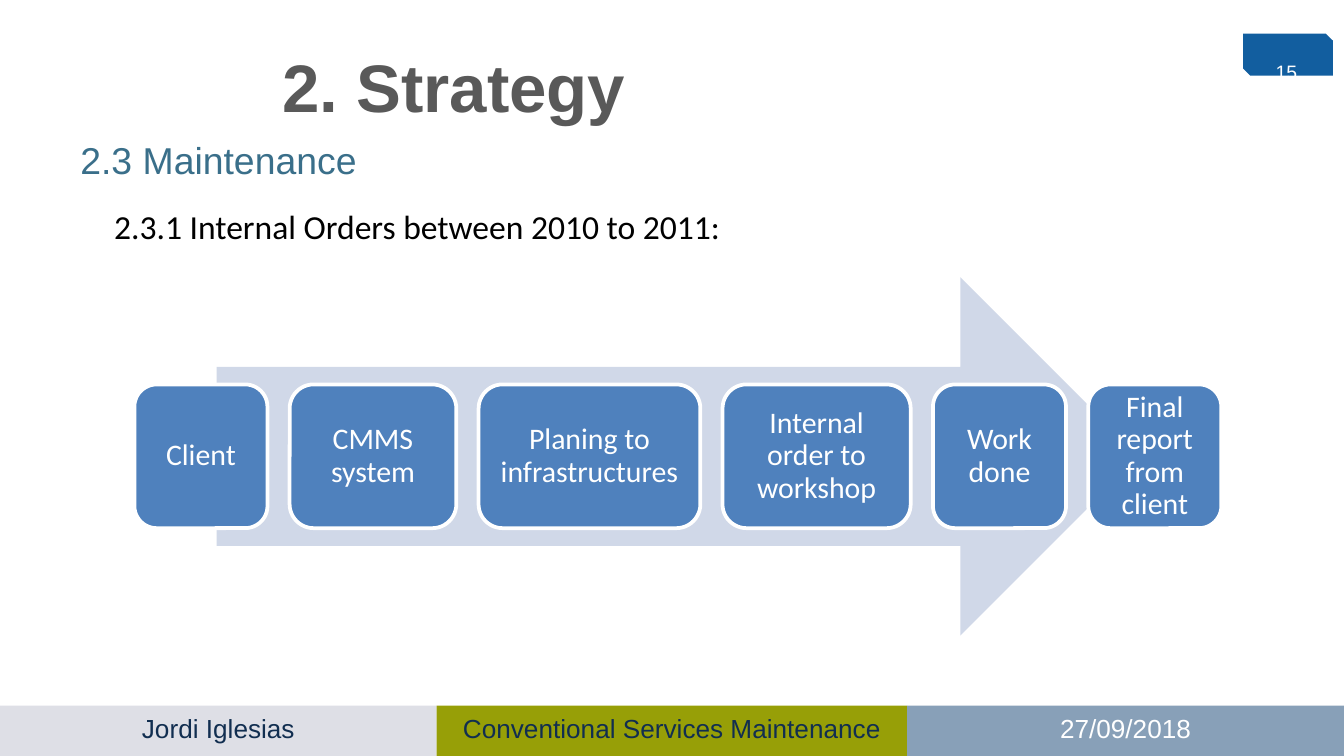
from pptx import Presentation
from pptx.dml.color import RGBColor
from pptx.enum.shapes import MSO_SHAPE
from pptx.enum.text import MSO_ANCHOR, PP_ALIGN
from pptx.util import Pt

COLORS = {
    "white": "FFFFFF",
    "black": "000000",
    "title": "595959",
    "heading": "3A6F8A",
    "navy": "112E50",
    "number_tab": "125E9F",
    "author_band": "DEDFE6",
    "topic_band": "979F07",
    "date_band": "88A0B8",
    "arrow": "D0D8E8",
    "step": "4F81BD",
}

FOOTER_TOP = 378
FOOTER_HEIGHT = 27
FOOTER = [
    ("Jordi Iglesias", 0, 234, "author_band", "navy"),
    ("Conventional Services Maintenance", 234, 252, "topic_band", "navy"),
    ("27/09/2018", 486, 234, "date_band", "white"),
]

STEPS_LEFT = 72
STEPS_TOP = 206
STEP_HEIGHT = 77
STEP_GAP = 11.9
STEPS = [
    ("Client", 71.3),
    ("CMMS system", 89.3),
    ("Planing to infrastructures", 118.8),
    ("Internal order to workshop", 100.8),
    ("Work done", 71.3),
    ("Final report from client", 71.3),
]


def color(name):
    return RGBColor.from_string(COLORS[name])


def write_text(shape, text, size, font_name, font_color, align=PP_ALIGN.LEFT, bold=False):
    text_frame = shape.text_frame
    text_frame.word_wrap = True
    text_frame.text = text
    paragraph = text_frame.paragraphs[0]
    paragraph.alignment = align
    font = paragraph.runs[0].font
    font.size = Pt(size)
    font.name = font_name
    font.bold = bold
    font.color.rgb = color(font_color)
    return paragraph


def add_filled_shape(slide, kind, left, top, width, height, fill):
    shape = slide.shapes.add_shape(kind, Pt(left), Pt(top), Pt(width), Pt(height))
    shape.shadow.inherit = False
    shape.fill.solid()
    shape.fill.fore_color.rgb = color(fill)
    shape.line.fill.background()
    return shape


def add_label(slide, text, left, top, width, height, size, font_name, font_color,
              align=PP_ALIGN.LEFT, bold=False, inset_top=3.6):
    label = slide.shapes.add_textbox(Pt(left), Pt(top), Pt(width), Pt(height))
    label.text_frame.margin_top = Pt(inset_top)
    write_text(label, text, size, font_name, font_color, align, bold)


def add_footer(slide):
    for text, left, width, fill, font_color in FOOTER:
        add_filled_shape(slide, MSO_SHAPE.RECTANGLE, left, FOOTER_TOP, width, FOOTER_HEIGHT, fill)
        add_label(slide, text, left, FOOTER_TOP, width, 24.5, 14, "Arial", font_color,
                  PP_ALIGN.CENTER)


def add_step(slide, text, left, width):
    step = add_filled_shape(slide, MSO_SHAPE.ROUNDED_RECTANGLE, left, STEPS_TOP,
                            width, STEP_HEIGHT, "step")
    step.line.color.rgb = color("white")
    step.line.width = Pt(2)
    text_frame = step.text_frame
    text_frame.margin_left = text_frame.margin_right = Pt(5)
    text_frame.margin_top = text_frame.margin_bottom = Pt(5)
    text_frame.vertical_anchor = MSO_ANCHOR.MIDDLE
    paragraph = write_text(step, text, 16, "Calibri", "white", PP_ALIGN.CENTER)
    paragraph.line_spacing = 0.9


def add_process(slide):
    add_filled_shape(slide, MSO_SHAPE.RIGHT_ARROW, 116, 148.5, 494.5, 192, "arrow")
    left = STEPS_LEFT
    for text, width in STEPS:
        add_step(slide, text, left, width)
        left += width + STEP_GAP


def main():
    presentation = Presentation()
    presentation.slide_width = Pt(720)
    presentation.slide_height = Pt(405)
    slide = presentation.slides.add_slide(presentation.slide_layouts[6])

    add_filled_shape(slide, MSO_SHAPE.SNIP_2_DIAG_RECTANGLE, 666, 18, 48, 22.5, "number_tab")
    add_footer(slide)
    add_label(slide, "2. Strategy", 144, 18, 516, 51, 36, "Arial", "title",
              bold=True, inset_top=6.5)
    add_label(slide, "2.3 Maintenance", 36, 67.5, 648, 27, 20, "Arial", "heading", inset_top=6)
    add_label(slide, "15", 654, 27, 48, 18, 10.4, "Arial", "white", PP_ALIGN.RIGHT, inset_top=5)
    add_process(slide)
    add_label(slide, "2.3.1 Internal Orders between 2010 to 2011:", 54, 106.5, 450, 29,
              18, "Calibri", "black")

    presentation.save("out.pptx")


if __name__ == "__main__":
    main()
